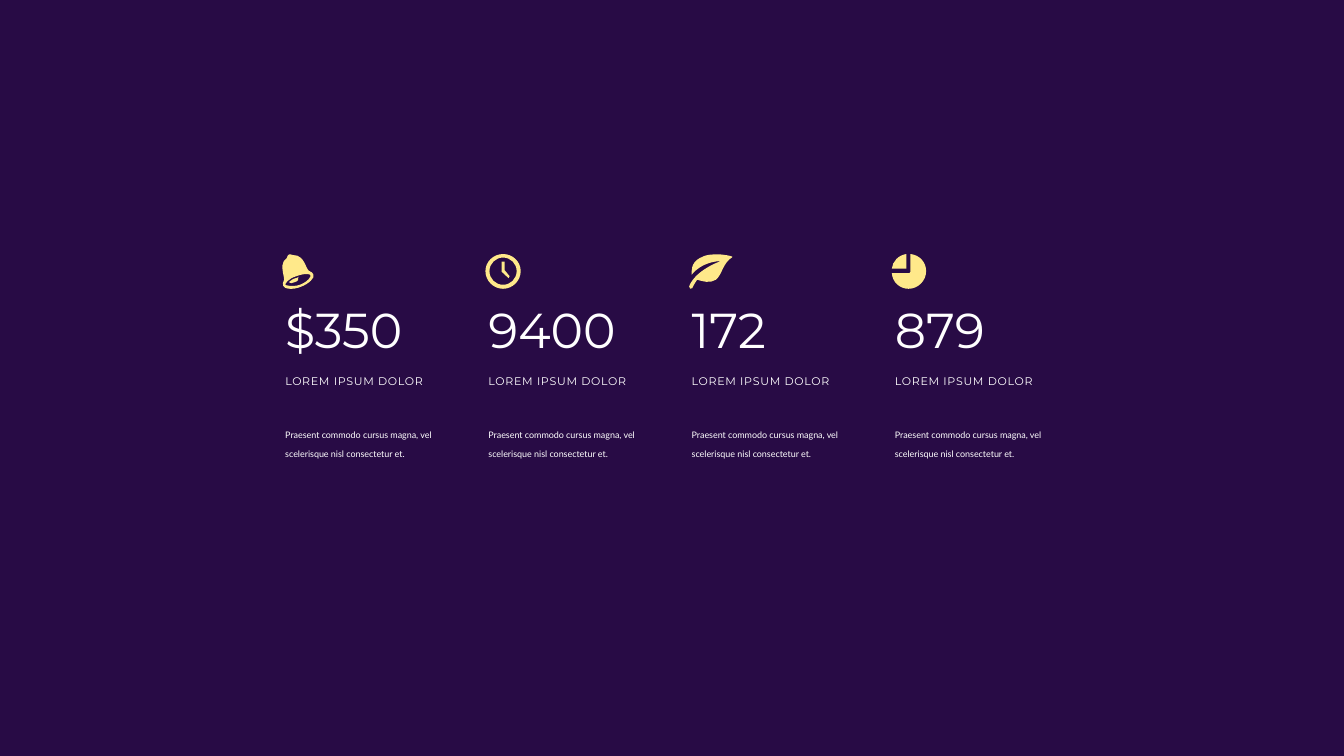
from lxml.etree import SubElement
from pptx import Presentation
from pptx.dml.color import RGBColor
from pptx.enum.shapes import MSO_SHAPE
from pptx.enum.text import MSO_AUTO_SIZE
from pptx.oxml.ns import qn
from pptx.util import Inches, Pt


def paint(fill, hex_colour):
    fill.solid()
    fill.fore_color.rgb = RGBColor.from_string(hex_colour)


def trace(geometry, outlines):
    """Draw outlines: a start point, then lines (x, y) and curves (6 numbers)."""
    for child in list(geometry):
        geometry.remove(child)
    for start, *segments in outlines:
        for tag, numbers in [("moveTo", start)] + [
                ("lnTo" if len(s) == 2 else "cubicBezTo", s) for s in segments]:
            command = SubElement(geometry, qn(f"a:{tag}"))
            for x, y in zip(numbers[::2], numbers[1::2]):
                SubElement(command, qn("a:pt"), x=str(x), y=str(y))
        SubElement(geometry, qn("a:close"))


# Slide and grid
deck = Presentation()
deck.slide_width, deck.slide_height = Inches(26.67), Inches(15)
slide = deck.slides.add_slide(deck.slide_layouts[6])

first_column, column_step = 0.21 * deck.slide_width, 0.1512 * deck.slide_width
icon_row, figure_row, label_row, body_row = (
    int(share * deck.slide_height) for share in (0.336, 0.392, 0.492, 0.559))

# Backdrop
backdrop = slide.shapes.add_shape(
    MSO_SHAPE.RECTANGLE, 0, 0, deck.slide_width, deck.slide_height)
paint(backdrop.fill, "280B45")
backdrop.line.fill.background()
backdrop.shadow.inherit = False

# Icon outlines, in hundredths of an inch from the part's corner
bell = [
    [(49, 28), (41, 9, 35, 2, 21, 2), (16, 2, 17, -1, 13, 1), (9, 2, 13, 3, 9, 8),
     (-2, 16, -1, 26, 3, 45), (6, 54, -1, 55, 2, 63), (3, 69, 20, 72, 37, 65),
     (53, 59, 65, 47, 62, 41), (59, 33, 53, 37, 49, 28)],
    [(35, 61), (20, 66, 7, 62, 6, 61), (6, 59, 11, 49, 28, 44),
     (47, 37, 56, 40, 56, 42), (58, 44, 51, 55, 35, 61)],
    [(30, 47), (21, 49, 17, 52, 13, 56), (16, 58, 20, 59, 24, 56),
     (31, 55, 34, 49, 32, 45), (32, 45, 31, 47, 30, 47)],
]
clock_ring = [
    [(35, 0), (16, 0, 0, 15, 0, 34), (0, 53, 16, 69, 35, 69),
     (54, 69, 70, 53, 70, 34), (70, 15, 54, 0, 35, 0)],
    [(35, 61), (20, 61, 8, 49, 8, 34), (8, 19, 20, 7, 35, 7),
     (50, 7, 62, 19, 62, 34), (62, 49, 50, 61, 35, 61)],
]
clock_hands = [[(6, 0), (0, 0), (0, 20), (14, 33), (16, 29), (6, 17)]]
leaf = [
    [(22, 8), (4, 18, 6, 34, 6, 41), (29, 13, 64, 14, 64, 14), (64, 14, 14, 31, 1, 64),
     (-1, 68, 6, 71, 7, 68), (11, 59, 17, 51, 17, 51), (27, 54, 42, 59, 54, 51),
     (67, 41, 67, 18, 87, 6), (92, 5, 46, -7, 22, 8)],
]
pie = [
    [(29, 0), (13, 2, 1, 15, 0, 29), (29, 29)],
    [(37, 0), (37, 34), (37, 37, 36, 38, 33, 38), (0, 38), (1, 56, 16, 69, 33, 69),
     (52, 69, 68, 53, 68, 34), (68, 16, 55, 2, 37, 0)],
]

# Text formats
frame_format = dict.fromkeys(
    ("margin_left", "margin_top", "margin_right", "margin_bottom"), Inches(0.06))
figure_font = {"name": "Montserrat", "size": Pt(70)}
label_font = {"name": "Montserrat", "size": Pt(15.8)}
body_font = {"name": "Lato", "size": Pt(22)}
body_text = "Praesent commodo cursus magna, vel scelerisque nisl consectetur et."
fit, fixed = MSO_AUTO_SIZE.SHAPE_TO_FIT_TEXT, MSO_AUTO_SIZE.NONE

# Figure, its width, and icon parts as x, y, width, height, outlines
columns = [
    ("$350", 2.63, [(0, 0, 62, 69, bell)]),
    ("9400", 2.81, [(0, 0, 70, 69, clock_ring), (32, 15, 16, 33, clock_hands)]),
    ("172", 1.76, [(0, 0, 87, 69, leaf)]),
    ("879", 2.06, [(0, 0, 68, 69, pie)]),
]

for number, (figure, figure_width, icon) in enumerate(columns):
    left = int(first_column + number * column_step)

    # Icon
    for x, y, width, height, outlines in icon:
        pen = slide.shapes.build_freeform(scale=Inches(0.01))
        pen.add_line_segments([(width, 0), (width, height), (0, height)])
        part = pen.convert_to_shape(left + Inches(x / 100), icon_row + Inches(y / 100))
        geometry = next(part._element.iter(qn("a:path")))
        trace(geometry, outlines)
        paint(part.fill, "FFE98A")
        part.line.fill.background()
        part.shadow.inherit = False

    # Figure, label and body text; spc and baseline are hundredths and thousandths
    for text, top, width, height, font, wrap, size_rule, before, extras in (
        (figure, figure_row, figure_width, 1.31, figure_font, False, fit, 0, {}),
        ("LOREM IPSUM DOLOR", label_row, 2.91, 0.4, label_font, True, fixed, 0,
         {"spc": "95"}),
        (body_text, body_row, 3.37, 1.78, body_font, True, fit, 45,
         {"baseline": "14000"}),
    ):
        box = slide.shapes.add_textbox(left, top, Inches(width), Inches(height))
        frame = box.text_frame
        for key, value in {**frame_format, "word_wrap": wrap, "auto_size": size_rule}.items():
            setattr(frame, key, value)
        paragraph = frame.paragraphs[0]
        paragraph.space_before = Pt(before)
        run = paragraph.add_run()
        run.text = text
        for key, value in font.items():
            setattr(run.font, key, value)
        paint(run.font.fill, "FFFFFF")
        for key, value in extras.items():
            run.font._element.set(key, value)

deck.save("out.pptx")
